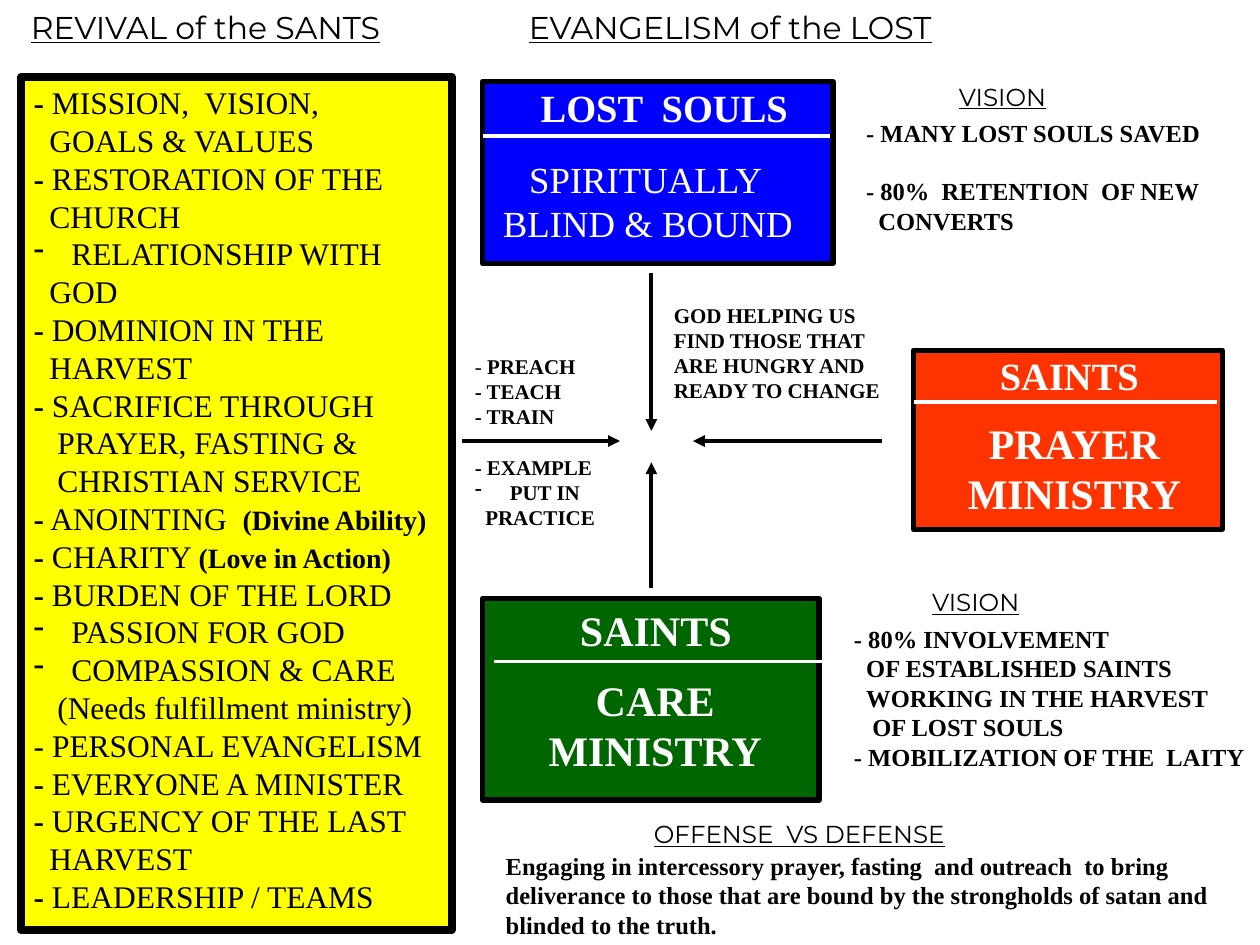
from lxml import etree
from pptx import Presentation
from pptx.dml.color import RGBColor
from pptx.enum import shapes, text
from pptx.oxml.ns import qn
from pptx.util import Pt

SERIF, SANS = "Times New Roman", "Montserrat"
BLACK, WHITE = "000000", "FFFFFF"


def rgb(value):
    return RGBColor.from_string(value)


def line(words, indent=0, before=0, bullet=False, note=""):
    """One paragraph; *stars* mark bold words, note is a smaller bold ending."""
    return dict(words=words, indent=indent, before=before, bullet=bullet, note=note)


def add_run(p, words, size, color, font, bold, underline=False):
    r = p.add_run()
    r.text = words
    r.font.name, r.font.size = font, Pt(size)
    r.font.bold, r.font.underline = bold, underline
    r.font.color.rgb = rgb(color)


def write(sp, lines, size, color=BLACK, font=SERIF, bold=False,
          underline=False, align=text.PP_ALIGN.LEFT, inset=0):
    tf = sp.text_frame
    tf.word_wrap = True
    tf.vertical_anchor = text.MSO_ANCHOR.TOP
    tf.margin_left = tf.margin_right = Pt(inset)
    tf.margin_top = tf.margin_bottom = Pt(inset / 2)
    for i, item in enumerate(lines):
        if isinstance(item, str):
            item = line(item)
        p = tf.paragraphs[0] if i == 0 else tf.add_paragraph()
        p.alignment = align
        p.line_spacing = Pt(size * 1.2)
        p.space_before = Pt(item["before"])
        pPr = p._p.get_or_add_pPr()
        pPr.set("marL", str(Pt(item["indent"])))
        pPr.set("indent", str(-Pt(item["indent"]) if item["bullet"] else 0))
        if item["bullet"]:
            etree.SubElement(pPr, qn("a:buChar")).set("char", "-")
        else:
            etree.SubElement(pPr, qn("a:buNone"))
        for n, part in enumerate(item["words"].split("*")):
            if part:
                add_run(p, part, size, color, font, bold or n % 2 == 1, underline)
        if item["note"]:
            add_run(p, item["note"], size - 2, color, font, True)


def add_text(s, x, y, w, h, lines, size, **style):
    write(s.shapes.add_textbox(Pt(x), Pt(y), Pt(w), Pt(h)), lines, size, **style)


def add_heading(s, x, y, words, size=14):
    add_text(s, x, y, 260, size * 1.2, [words], size, font=SANS, underline=True)


def add_box(s, x, y, w, h, fill, border=3):
    sp = s.shapes.add_shape(shapes.MSO_SHAPE.RECTANGLE, Pt(x), Pt(y), Pt(w), Pt(h))
    sp.shadow.inherit = False
    sp.fill.solid()
    sp.fill.fore_color.rgb = rgb(fill)
    sp.line.color.rgb = rgb(BLACK)
    sp.line.width = Pt(border)
    return sp


def add_line(s, x1, y1, x2, y2, color, arrow=False):
    c = s.shapes.add_connector(shapes.MSO_CONNECTOR.STRAIGHT,
                               Pt(x1), Pt(y1), Pt(x2), Pt(y2))
    c.line.color.rgb = rgb(color)
    c.line.width = Pt(2.25)
    if arrow:
        etree.SubElement(c.line._get_or_add_ln(), qn("a:tailEnd")).set("type", "triangle")
    etree.SubElement(c._element.spPr, qn("a:effectLst"))


def add_revival(s):
    add_heading(s, 17.7, 4.5, "REVIVAL of the SANTS", 18)
    panel = add_box(s, 12.2, 44, 246, 487.4, "FFFF00", 4.5)
    write(panel, [
        "*-* MISSION,  VISION,",
        line("GOALS & VALUES", 9),
        "*-* RESTORATION OF THE",
        line("CHURCH", 9),
        line("RELATIONSHIP WITH", 21.5, bullet=True),
        line("GOD", 9),
        "*-* DOMINION IN THE",
        line("HARVEST", 9),
        "*-* SACRIFICE THROUGH",
        line("PRAYER, FASTING &", 13.5),
        line("CHRISTIAN SERVICE", 13.5),
        line("*-* ANOINTING  ", note="(Divine Ability)"),
        line("*-* CHARITY ", note="(Love in Action)"),
        "*-* BURDEN OF THE LORD",
        line("PASSION FOR GOD", 21.5, bullet=True),
        line("COMPASSION & CARE", 21.5, bullet=True),
        line("(Needs fulfillment ministry)", 13.5),
        "- PERSONAL EVANGELISM",
        "*-* EVERYONE A MINISTER",
        "*-* URGENCY OF THE LAST",
        line("HARVEST", 9),
        "*-* LEADERSHIP / TEAMS",
    ], 18, inset=7.2)


def add_groups(s):
    """The three coloured boxes, each a title, a rule and a body."""
    add_box(s, 275.8, 46.8, 200.2, 103.7, "0000FF")
    add_text(s, 309, 47.9, 160, 27, ["LOST  SOULS"], 22, color=WHITE, bold=True)
    add_line(s, 275.8, 77.8, 474.5, 77.8, WHITE)
    add_text(s, 287.4, 89.7, 185, 51,
             [line("SPIRITUALLY", 15), "BLIND & BOUND"], 21, color=WHITE)

    add_box(s, 522, 200.2, 176.4, 102.2, "FF3300")
    add_text(s, 571.4, 201, 100, 27, ["SAINTS"], 22, color=WHITE, bold=True)
    add_line(s, 522, 229.7, 695.5, 229.7, WHITE)
    add_text(s, 553, 238.6, 140, 58,
             [line("PRAYER", 12), "MINISTRY"], 24, color=WHITE, bold=True)

    add_box(s, 275.8, 342, 192.2, 115.2, "006600")
    add_text(s, 331.4, 345.4, 110, 29, ["SAINTS"], 24, color=WHITE, bold=True)
    add_line(s, 282.2, 378, 469.5, 378, WHITE)
    add_text(s, 289.4, 385.4, 170, 58, ["CARE", "MINISTRY"], 24, color=WHITE,
             bold=True, align=text.PP_ALIGN.CENTER)


def add_arrows(s):
    for ends in ((372.2, 156.2, 372.2, 246.2), (264.2, 252, 354.2, 252),
                 (372.2, 336.2, 372.2, 264.2), (504, 252, 396, 252)):
        add_line(s, *ends, BLACK, arrow=True)


def add_notes_around(s):
    add_heading(s, 548, 43 + 3.6, "VISION")
    add_text(s, 494.9, 67.4, 220, 68, [
        "- MANY LOST SOULS SAVED",
        line("- 80%  RETENTION  OF NEW", before=16.5),
        line("CONVERTS", 7)], 14, bold=True)

    add_text(s, 385, 172.7, 135, 58, [
        "GOD HELPING US", "FIND THOSE THAT", "ARE HUNGRY AND",
        "READY TO CHANGE"], 12, bold=True)
    add_text(s, 271.3, 201.9, 95, 101, [
        "- *PREACH*", "*- TEACH*", "*- TRAIN*",
        line("*- EXAMPLE*", before=14.4),
        line("*PUT IN*", 20, bullet=True),
        line("*PRACTICE*", 6)], 12)

    add_heading(s, 532.6, 335.6, "VISION")
    add_text(s, 488, 356.5, 232, 84, [
        "- 80% INVOLVEMENT",
        line("OF ESTABLISHED SAINTS", 7),
        line("WORKING IN THE HARVEST", 7),
        line("OF LOST SOULS", 10.5),
        "- MOBILIZATION OF THE  LAITY"], 14, bold=True)

    add_heading(s, 373.7, 468.2, "OFFENSE  VS DEFENSE")
    add_text(s, 289, 486.3, 423, 51, [
        "Engaging in intercessory prayer, fasting  and outreach  to bring "
        "deliverance to those that are bound by the strongholds of satan and  "
        "blinded to the truth."], 14, bold=True)


def main():
    prs = Presentation()
    prs.slide_width, prs.slide_height = Pt(720), Pt(540)
    s = prs.slides.add_slide(prs.slide_layouts[6])
    add_revival(s)
    add_heading(s, 302.3, 4.5, "EVANGELISM of the LOST", 18)
    add_groups(s)
    add_arrows(s)
    add_notes_around(s)
    prs.save("out.pptx")


if __name__ == "__main__":
    main()
